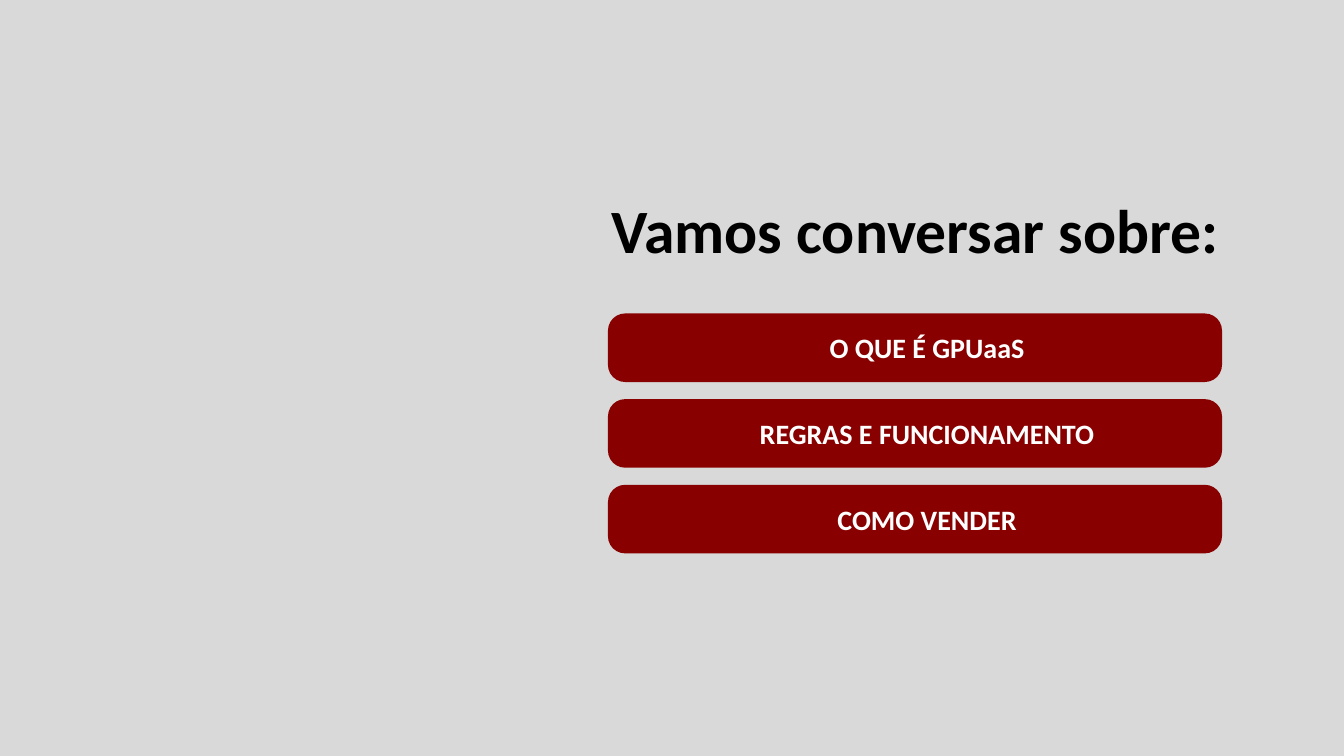
"""Build the agenda slide with a title and three topic bars."""
from dataclasses import dataclass

from pptx import Presentation
from pptx.dml.color import RGBColor
from pptx.enum.shapes import MSO_SHAPE
from pptx.enum.text import MSO_ANCHOR, MSO_AUTO_SIZE, PP_ALIGN
from pptx.util import Inches, Pt


@dataclass(frozen=True)
class Theme:
    background: RGBColor = RGBColor(0xD9, 0xD9, 0xD9)
    bar: RGBColor = RGBColor(0x88, 0x00, 0x00)
    bar_text: RGBColor = RGBColor(0xFF, 0xFF, 0xFF)
    title_text: RGBColor = RGBColor(0x00, 0x00, 0x00)
    font: str = "Calibri"
    title_size: int = 44
    bar_size: int = 20


def write_centred(shape, text, size, color):
    """Write one bold centred line and return its paragraph."""
    frame = shape.text_frame
    frame.word_wrap = True
    para = frame.paragraphs[0]
    para.alignment = PP_ALIGN.CENTER
    para.line_spacing = 1.0
    span = para.add_run()
    span.text = text
    span.font.name = theme.font
    span.font.size = Pt(size)
    span.font.bold = True
    span.font.color.rgb = color
    return para


theme = Theme()
topics = ["O QUE É GPUaaS", "REGRAS E FUNCIONAMENTO", "COMO VENDER"]
bar_left, bar_top, bar_width, bar_height = 6.03, 3.11, 6.09, 0.68
row_pitch = 0.85
text_indent = 0.24

deck = Presentation()
deck.slide_width = Inches(13.33)
deck.slide_height = Inches(7.5)
page = deck.slides.add_slide(deck.slide_layouts.get_by_name("Title Only"))
page.background.fill.solid()
page.background.fill.fore_color.rgb = theme.background

title = page.shapes.title
title.left, title.top = Inches(5.25), Inches(1.85)
title.width, title.height = Inches(7.66), Inches(0.84)
title.text_frame.vertical_anchor = MSO_ANCHOR.TOP
title.text_frame.auto_size = MSO_AUTO_SIZE.SHAPE_TO_FIT_TEXT
write_centred(title, "Vamos conversar sobre:", theme.title_size, theme.title_text)

for row, topic in enumerate(topics):
    bar = page.shapes.add_shape(
        MSO_SHAPE.ROUNDED_RECTANGLE,
        Inches(bar_left),
        Inches(bar_top + row * row_pitch),
        Inches(bar_width),
        Inches(bar_height),
    )
    bar.name = f"Topic {row + 1}"
    bar.adjustments[0] = 0.25
    bar.shadow.inherit = False
    bar.fill.solid()
    bar.fill.fore_color.rgb = theme.bar
    bar.line.fill.background()
    bar.text_frame.vertical_anchor = MSO_ANCHOR.MIDDLE
    para = write_centred(bar, topic, theme.bar_size, theme.bar_text)
    properties = para._p.get_or_add_pPr()
    properties.set("marL", str(Inches(text_indent)))
    properties.set("indent", "0")

deck.save("out.pptx")
